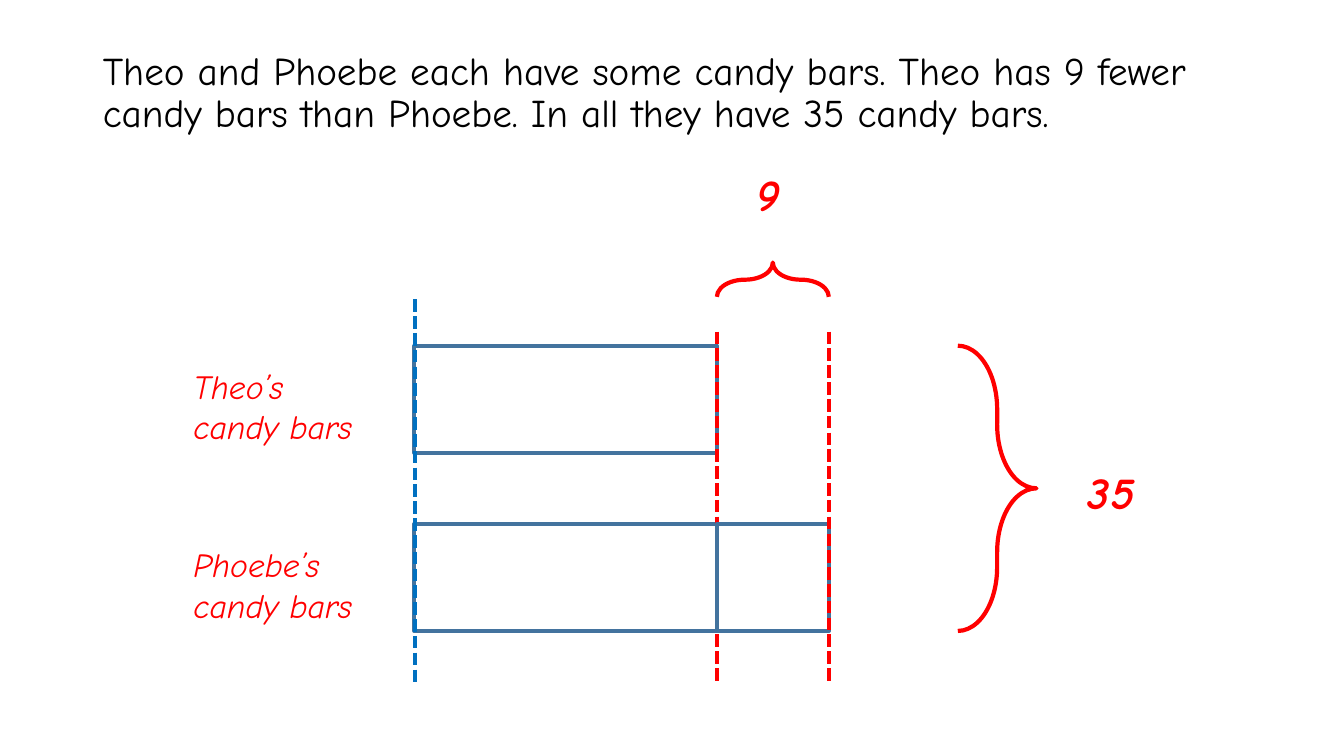
from dataclasses import dataclass
from lxml import etree
from pptx import Presentation
from pptx.dml.color import RGBColor
from pptx.enum.dml import MSO_LINE
from pptx.enum.shapes import MSO_CONNECTOR, MSO_SHAPE
from pptx.enum.text import MSO_ANCHOR, MSO_AUTO_SIZE, PP_ALIGN
from pptx.oxml.ns import qn
from pptx.util import Inches, Pt

RECT, BRACE = MSO_SHAPE.RECTANGLE, MSO_SHAPE.RIGHT_BRACE
STRAIGHT = MSO_CONNECTOR.STRAIGHT
DASH = MSO_LINE.SQUARE_DOT
TOP, LEFT = MSO_ANCHOR.TOP, PP_ALIGN.LEFT
GROW, FIXED = MSO_AUTO_SIZE.SHAPE_TO_FIT_TEXT, MSO_AUTO_SIZE.NONE


@dataclass(frozen=True)
class Theme:
    font: str = "Comic Neue"
    ink: str = "000000"
    red: str = "FF0000"
    blue: str = "0070C0"
    steel: str = "43739E"
    story: int = 28
    label: int = 24
    count: int = 32
    stroke: int = 3


@dataclass(frozen=True)
class Box:
    x: float
    y: float
    w: float
    h: float

    def emu(self):
        return [Inches(n) for n in (self.x, self.y, self.w, self.h)]


THEME = Theme()
WIDE, HIGH = 13.33, 7.5


def style(para, size, color, bold=False, italic=False):
    font = para.font
    font.name, font.size = THEME.font, Pt(size)
    font.bold, font.italic = bold, italic
    font.color.rgb = RGBColor.from_string(color)


def ink(line, color):
    line.color.rgb = RGBColor.from_string(color)
    line.width = Pt(THEME.stroke)


def outline(slide, kind, box, color):
    shape = slide.shapes.add_shape(kind, *box.emu())
    shape.shadow.inherit = False
    shape.fill.background()
    ink(shape.line, color)
    return shape


def brace(slide, box, turn=0):
    shape = outline(slide, BRACE, box, THEME.red)
    shape.adjustments[0] = 0.81
    shape.rotation = turn


def guide(slide, x, top, end, color):
    ends = [Inches(n) for n in (x, top, x, end)]
    line = slide.shapes.add_connector(STRAIGHT, *ends)
    ink(line.line, color)
    line.line.dash_style = DASH
    etree.SubElement(line._element.spPr, qn("a:effectLst"))


def note(slide, box, text, size, bold=False):
    frame = slide.shapes.add_textbox(*box.emu()).text_frame
    frame.word_wrap = True
    frame.auto_size = GROW
    frame.text = text
    style(frame.paragraphs[0], size, THEME.red, bold, True)


def story(slide, box, text):
    title = slide.shapes.title
    title.left, title.top, title.width, title.height = box.emu()
    frame = title.text_frame
    frame.text = text
    frame.vertical_anchor = TOP
    frame.auto_size = FIXED
    para = frame.paragraphs[0]
    para.alignment = LEFT
    para.line_spacing = 0.9
    para.space_before = Pt(10)
    style(para, THEME.story, THEME.ink)


def model(slide, box, names, gap, total):
    bar = box.h * 0.375
    base = box.w * 0.73
    more = box.w - base
    split, right, end = box.x + base, box.x + box.w, box.y + box.h
    rows = [box.y, end - bar]

    for y, name in zip(rows, names):
        outline(slide, RECT, Box(box.x, y, base, bar), THEME.steel)
        note(slide, Box(box.x - 2.29, y + 0.15, 1.91, 0.91), name, THEME.label)

    guide(slide, box.x + 0.01, box.y - 0.46, end + 0.52, THEME.blue)
    guide(slide, split, box.y - 0.14, end + 0.5, THEME.red)
    outline(slide, RECT, Box(split, rows[1], more, bar), THEME.steel)
    guide(slide, right, box.y - 0.14, end + 0.5, THEME.red)

    mid = split + more / 2
    deep = 0.34
    brace(slide, Box(mid - deep / 2, box.y - 1.21, deep, more), 270)
    note(slide, Box(mid - 0.26, box.y - 1.82, 0.53, 0.64), gap, THEME.count, True)
    brace(slide, Box(right + 1.28, box.y, 0.78, box.h))
    note(slide, Box(right + 2.47, box.y + box.h * 0.4, 0.87, 0.64), total, THEME.count, True)


def main():
    deck = Presentation()
    deck.slide_width, deck.slide_height = Inches(WIDE), Inches(HIGH)
    slide = deck.slides.add_slide(deck.slide_layouts[5])
    story(
        slide,
        Box(0.92, 0.46, 11.5, 1.1),
        "Theo and Phoebe each have some candy bars. Theo has 9 fewer candy bars "
        "than Phoebe. In all they have 35 candy bars.",
    )
    names = ["Theo’s candy bars", "Phoebe’s candy bars"]
    model(slide, Box(4.11, 3.43, 4.11, 2.83), names, "9", "35")
    deck.save("out.pptx")


if __name__ == "__main__":
    main()
